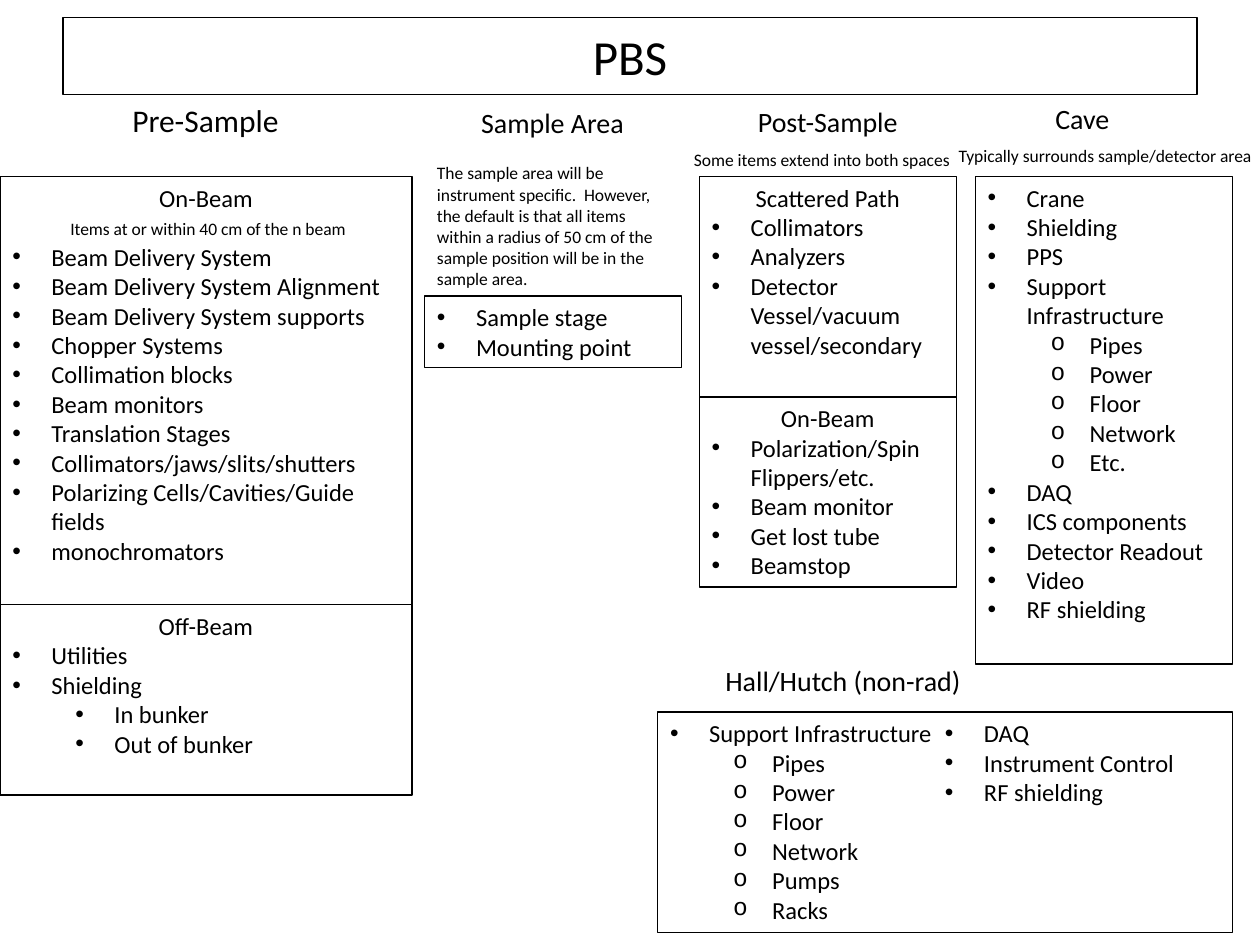
from lxml import etree
from pptx import Presentation
from pptx.dml.color import RGBColor
from pptx.enum.shapes import MSO_SHAPE
from pptx.enum.text import MSO_ANCHOR, MSO_AUTO_SIZE, PP_ALIGN
from pptx.oxml.ns import qn
from pptx.util import Inches, Pt

RECTANGLE = MSO_SHAPE.RECTANGLE
TOP, MIDDLE = MSO_ANCHOR.TOP, MSO_ANCHOR.MIDDLE
GROW, FIXED = MSO_AUTO_SIZE.SHAPE_TO_FIT_TEXT, MSO_AUTO_SIZE.NONE
LEFT, CENTER = PP_ALIGN.LEFT, PP_ALIGN.CENTER

COLUMNS, ROWS = 100, 75
WIDTH, HEIGHT = Inches(10), Inches(7.5)
BULLET_FONTS = {"•": "Arial", "o": "Courier New"}
SUPPORT = ["Pipes", "Power", "Floor", "Network"]


def color(value):
    return RGBColor.from_string(value)


class Board:
    """Draws titled boxes of bulleted items on a grid of 100 columns by 75 rows."""

    font = "Calibri"
    ink = "000000"
    line_width = Pt(0.75)
    item_size = 14
    note_size = 10
    hanging = Inches(0.31)
    level_step = Inches(0.5)

    def __init__(self, deck):
        self.slide = deck.slides.add_slide(deck.slide_layouts[6])

    def place(self, column, row, columns, rows):
        across, down = WIDTH / COLUMNS, HEIGHT / ROWS
        return (round(column * across), round(row * down),
                round(columns * across), round(rows * down))

    def style(self, para, size, align):
        para.alignment = align
        for span in para.runs:
            span.font.name = self.font
            span.font.size = Pt(size)
            span.font.color.rgb = color(self.ink)

    def bullet(self, para, level, mark):
        para.level = level
        properties = para._p.get_or_add_pPr()
        properties.set("marL", str(self.hanging + level * self.level_step))
        properties.set("indent", str(-self.hanging))
        etree.SubElement(properties, qn("a:buFont")).set("typeface", BULLET_FONTS[mark])
        etree.SubElement(properties, qn("a:buChar")).set("char", mark)

    def frame(self, area):
        box = self.slide.shapes.add_shape(RECTANGLE, *self.place(*area))
        box.shadow.inherit = False
        box.fill.background()
        box.line.color.rgb = color(self.ink)
        box.line.width = self.line_width
        box.text_frame.word_wrap = True
        return box.text_frame

    def text(self, area, words, size, align, wrap):
        frame = self.slide.shapes.add_textbox(*self.place(*area)).text_frame
        frame.word_wrap = wrap
        frame.auto_size = GROW
        frame.text = words
        self.style(frame.paragraphs[0], size, align)

    def heading(self, area, words, size=16):
        self.text(area, words, size, CENTER, False)

    def note(self, area, words):
        self.text(area, words, self.note_size, LEFT, True)

    def banner(self, area, words):
        frame = self.frame(area)
        frame.auto_size = FIXED
        frame.vertical_anchor = MIDDLE
        frame.text = words
        self.style(frame.paragraphs[0], 28, CENTER)

    def items(self, area, entries, title=None, title_gap=0, sub_mark="o", text_columns=1):
        lines = [] if title is None else [(title, None)]
        for entry in entries:
            if isinstance(entry, list):
                lines += [(words, 1) for words in entry]
            else:
                lines.append((entry, 0))
        frame = self.frame(area)
        frame.vertical_anchor = TOP
        frame.auto_size = GROW
        if text_columns > 1:
            frame._txBody.bodyPr.set("numCol", str(text_columns))
        frame.text = "\n".join(words for words, _ in lines)
        for para, (_, level) in zip(frame.paragraphs, lines):
            self.style(para, self.item_size, CENTER if level is None else LEFT)
            if level is None:
                para.space_after = Pt(title_gap)
            else:
                self.bullet(para, level, sub_mark if level else "•")


def main():
    deck = Presentation()
    deck.slide_width, deck.slide_height = WIDTH, HEIGHT
    board = Board(deck)
    board.banner((5, 1.4, 90, 6.1), "PBS")

    board.heading((9.4, 7.5, 13.8, 4), "Pre-Sample", 18)
    board.items((0, 14, 32.7, 34), [
        "Beam Delivery System", "Beam Delivery System Alignment",
        "Beam Delivery System supports", "Chopper Systems", "Collimation blocks",
        "Beam monitors", "Translation Stages", "Collimators/jaws/slits/shutters",
        "Polarizing Cells/Cavities/Guide fields", "monochromators",
    ], title="On-Beam", title_gap=17)
    board.note((4.6, 16.8, 24.7, 2.7), "Items at or within 40 cm of the n beam")
    board.items((0, 48, 32.7, 15.1),
                ["Utilities", "Shielding", ["In bunker", "Out of bunker"]],
                title="Off-Beam", sub_mark="•")

    board.heading((37.1, 7.9, 13.5, 3.7), "Sample Area")
    board.note((33.7, 12.4, 20.4, 11.1),
               "The sample area will be instrument specific.  However, the default is "
               "that all items within a radius of 50 cm of the sample position will be "
               "in the sample area.")
    board.items((33.7, 23.5, 20.4, 5.7), ["Sample stage", "Mounting point"])

    board.heading((59, 7.8, 13.4, 3.7), "Post-Sample")
    board.note((54.1, 11.3, 23.3, 2.7), "Some items extend into both spaces")
    board.items((55.5, 14, 20.4, 17.5),
                ["Collimators", "Analyzers", "Detector Vessel/vacuum vessel/secondary"],
                title="Scattered Path")
    board.items((55.5, 31.5, 20.4, 15.1),
                ["Polarization/Spin Flippers/etc.", "Beam monitor", "Get lost tube",
                 "Beamstop"], title="On-Beam")

    board.heading((82.7, 7.6, 6.4, 3.7), "Cave")
    board.note((75.1, 11, 25.9, 2.7), "Typically surrounds sample/detector area")
    board.items((77.4, 14, 20.4, 38.7), [
        "Crane", "Shielding", "PPS", "Support Infrastructure", SUPPORT + ["Etc."],
        "DAQ", "ICS components", "Detector Readout", "Video", "RF shielding",
    ])

    board.heading((56.4, 52.2, 21, 3.7), "Hall/Hutch (non-rad)")
    board.items((52.2, 56.5, 45.6, 17.5), [
        "Support Infrastructure", SUPPORT + ["Pumps", "Racks"],
        "DAQ", "Instrument Control", "RF shielding",
    ], text_columns=2)

    deck.save("out.pptx")


if __name__ == "__main__":
    main()
